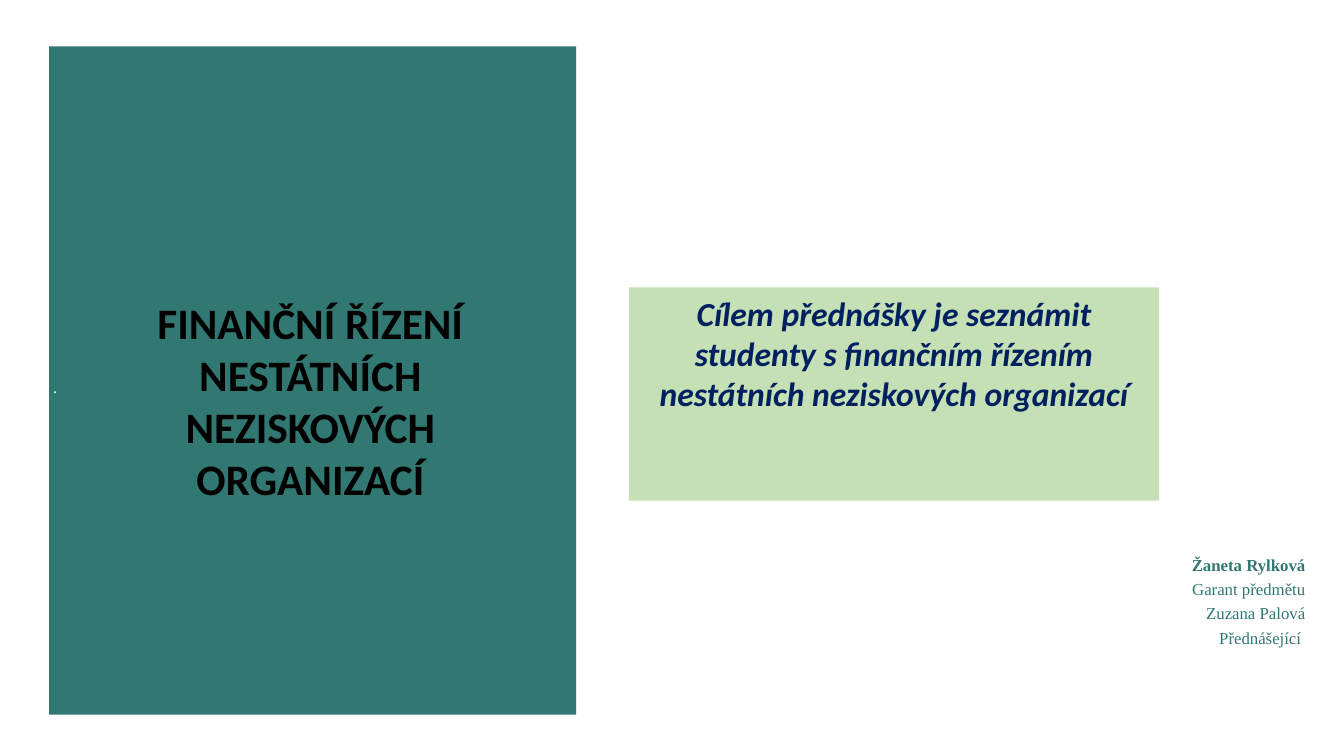
from pptx import Presentation
from pptx.dml.color import RGBColor
from pptx.enum.shapes import MSO_SHAPE
from pptx.enum.text import MSO_ANCHOR, PP_ALIGN
from pptx.util import Cm, Pt

TEAL, GREEN, NAVY, BLACK, WHITE = "307871", "C5E0B4", "002060", "000000", "FFFFFF"
SERIF = {"name": "Times New Roman", "size": Pt(12)}
HEADING = {"name": "Calibri", "size": Pt(31), "bold": True}
AIM = {"name": "Calibri", "size": Pt(24), "bold": True, "italic": True}

PANELS = [
    {"at": (1.24, 1.17, 13.28, 16.84), "fill": TEAL},
    {"at": (1.85, 7.42, 11.94, 5.33), "align": PP_ALIGN.CENTER, "anchor": MSO_ANCHOR.MIDDLE,
     "color": BLACK, "lines": [("FINANČNÍ ŘÍZENÍ NESTÁTNÍCH NEZISKOVÝCH ORGANIZACÍ", HEADING)]},
    {"at": (1.09, 9.37, 13.44, 1), "align": PP_ALIGN.LEFT, "color": WHITE, "lines": [(".", SERIF)]},
    {"at": (15.85, 7.24, 13.36, 5.38), "fill": GREEN, "align": PP_ALIGN.CENTER, "color": NAVY,
     "lines": [("Cílem přednášky je seznámit studenty s finančním řízením "
                "nestátních neziskových organizací", AIM)]},
    {"at": (25.76, 13.79, 7.47, 4.27), "align": PP_ALIGN.RIGHT, "color": TEAL,
     "insets": (0.33, 0.18), "lines": [
         ("Žaneta Rylková", {**SERIF, "bold": True}),
         ("Garant předmětu", SERIF),
         ("Zuzana Palová", SERIF),
         ("Přednášející ", SERIF)]},
]


def paint(color, value):
    color.rgb = RGBColor.from_string(value)


def apply(target, values):
    for name, value in values.items():
        setattr(target, name, value)


def add_panel(page, panel):
    place = [Cm(length) for length in panel["at"]]
    if "fill" in panel:
        box = page.shapes.add_shape(MSO_SHAPE.RECTANGLE, *place)
        box.shadow.inherit = False
        box.fill.solid()
        paint(box.fill.fore_color, panel["fill"])
        box.line.fill.background()
    else:
        box = page.shapes.add_textbox(*place)
    if "lines" in panel:
        write(box.text_frame, panel)


def write(frame, panel):
    side, edge = (Cm(inset) for inset in panel.get("insets", (0.25, 0.13)))
    apply(frame, {"word_wrap": True, "vertical_anchor": panel.get("anchor", MSO_ANCHOR.TOP),
                  "margin_left": side, "margin_right": side,
                  "margin_top": edge, "margin_bottom": edge})
    for index, (text, style) in enumerate(panel["lines"]):
        para = frame.add_paragraph() if index else frame.paragraphs[0]
        para.alignment = panel["align"]
        if index:
            para.space_before = Pt(3)
        span = para.add_run()
        span.text = text
        apply(span.font, style)
        paint(span.font.color, panel["color"])


def main():
    """Build the lecture's opening slide."""
    deck = Presentation()
    apply(deck, {"slide_width": Cm(33.87), "slide_height": Cm(19.05)})
    page = deck.slides.add_slide(deck.slide_layouts[6])
    for panel in PANELS:
        add_panel(page, panel)
    deck.save("out.pptx")


if __name__ == "__main__":
    main()
